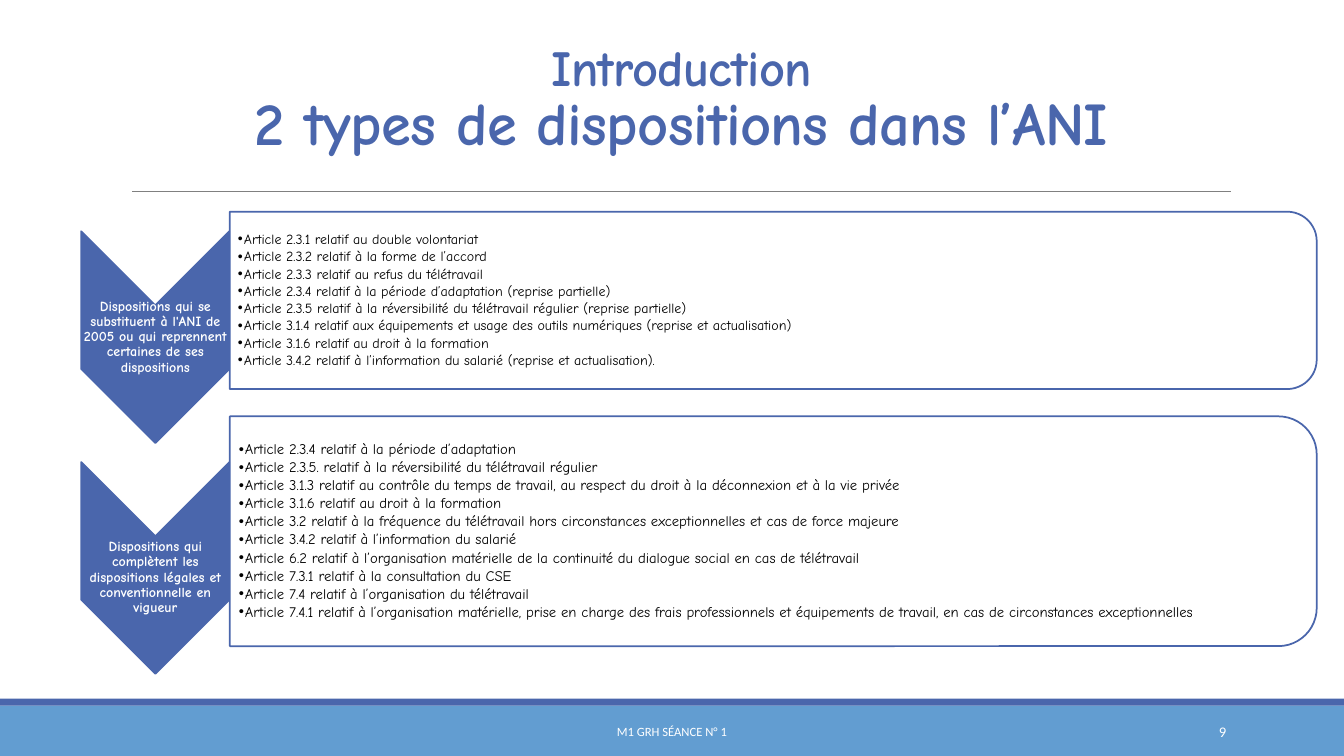
from lxml.etree import SubElement
from pptx import Presentation
from pptx.dml.color import RGBColor
from pptx.enum.shapes import MSO_CONNECTOR, MSO_SHAPE
from pptx.enum.text import MSO_ANCHOR, MSO_AUTO_SIZE, PP_ALIGN
from pptx.oxml.ns import qn
from pptx.util import Inches, Pt

WIDTH, HEIGHT = Inches(13.33), Inches(7.5)
BLUE, SKY, GREY, WHITE, BLACK = "4A66AC", "629DD1", "808080", "FFFFFF", "000000"
COMIC = "Comic Neue"
CORNER_INSET = 0.0488

SECTIONS = [
    {
        "label": "Dispositions qui se substituent à l'ANI de 2005 ou qui reprennent certaines de ses dispositions",
        "chevron_top": 30.6, "box_top": 28, "box_height": 23.47, "size": 10,
        "label_inset": 0.01, "list_inset": 0.08,
        "articles": [
            "Article 2.3.1 relatif au double volontariat",
            "Article 2.3.2 relatif à la forme de l’accord",
            "Article 2.3.3 relatif au refus du télétravail",
            "Article 2.3.4 relatif à la période d’adaptation (reprise partielle)",
            "Article 2.3.5 relatif à la réversibilité du télétravail régulier (reprise partielle)",
            "Article 3.1.4 relatif aux équipements et usage des outils numériques (reprise et actualisation)",
            "Article 3.1.6 relatif au droit à la formation",
            "Article 3.4.2 relatif à l’information du salarié (reprise et actualisation).",
        ],
    },
    {
        "label": "Dispositions qui complètent les dispositions légales et conventionnelle en vigueur",
        "chevron_top": 61.13, "box_top": 55.07, "box_height": 30.4, "size": 10.5,
        "label_inset": 0.2, "list_inset": 0.09,
        "articles": [
            "Article 2.3.4 relatif à la période d’adaptation",
            "Article 2.3.5. relatif à la réversibilité du télétravail régulier",
            "Article 3.1.3 relatif au contrôle du temps de travail, au respect du droit à la déconnexion et à la vie privée",
            "Article 3.1.6 relatif au droit à la formation",
            "Article 3.2 relatif à la fréquence du télétravail hors circonstances exceptionnelles et cas de force majeure",
            "Article 3.4.2 relatif à l’information du salarié",
            "Article 6.2 relatif à l’organisation matérielle de la continuité du dialogue social en cas de télétravail",
            "Article 7.3.1 relatif à la consultation du CSE",
            "Article 7.4 relatif à l’organisation du télétravail",
            "Article 7.4.1 relatif à l’organisation matérielle, prise en charge des frais professionnels et "
            "équipements de travail, en cas de circonstances exceptionnelles",
        ],
    },
]


def color(hex_value):
    """Turn a hex string into a colour."""
    return RGBColor.from_string(hex_value)


def share(x, y, w, h):
    """Turn percentages of the slide's size into lengths."""
    return [int(v * side / 100) for v, side in zip((x, y, w, h), (WIDTH, HEIGHT) * 2)]


def apply(target, **values):
    """Set every given attribute on the target."""
    for name, value in values.items():
        setattr(target, name, value)


def place(sp, frame):
    """Move and size a shape."""
    apply(sp, **dict(zip(("left", "top", "width", "height"), frame)))


def add_run(p, text, size, hex_value, font=COMIC, bold=False):
    """Add formatted text to a paragraph."""
    r = p.add_run()
    r.text = text
    apply(r.font, size=Pt(size), name=font, bold=bold)
    r.font.color.rgb = color(hex_value)
    return r


def set_frame(sp, anchor=MSO_ANCHOR.MIDDLE, **insets):
    """Set wrapping, anchor and insets of a text frame."""
    tf = sp.text_frame
    apply(tf, word_wrap=True, auto_size=MSO_AUTO_SIZE.NONE, vertical_anchor=anchor)
    apply(tf, **{f"margin_{side}": Inches(v) for side, v in insets.items()})
    return tf


def add_block(s, kind, frame, fill, line=None, turned=False):
    """Add a preset shape, turned by a quarter within its visible frame if asked."""
    x, y, w, h = frame
    if turned:
        x, y, w, h = x + (w - h) // 2, y + (h - w) // 2, h, w
    sp = s.shapes.add_shape(kind, x, y, w, h)
    apply(sp, rotation=90 if turned else 0)
    sp.shadow.inherit = False
    sp.fill.solid()
    sp.fill.fore_color.rgb = color(fill)
    if line:
        sp.line.color.rgb = color(line)
        sp.line.width = Pt(1.25)
    else:
        sp.line.fill.background()
    return sp


def add_rule(s, x1, x2, y):
    """Add the thin line under the title."""
    left, top, right, _ = share(x1, y, x2, 0)
    line = s.shapes.add_connector(MSO_CONNECTOR.STRAIGHT, left, top, right, top)
    line.line.color.rgb = color(GREY)
    line.line.width = Pt(0.5)
    SubElement(line.element.spPr, qn("a:effectLst"))


def add_text(s, frame, text, size, align, font="Calibri", bold=False, spacing=None, **insets):
    """Add a white one-paragraph text box."""
    tf = set_frame(s.shapes.add_textbox(*frame), **insets)
    p = tf.paragraphs[0]
    apply(p, alignment=align, line_spacing=spacing)
    add_run(p, text, size, WHITE, font, bold)


def fill_title(sp):
    """Write the two-line title."""
    place(sp, share(9.45, 4.13, 82.52, 17.47))
    p = set_frame(sp, MSO_ANCHOR.BOTTOM).paragraphs[0]
    apply(p, alignment=PP_ALIGN.CENTER, line_spacing=0.85)
    first = add_run(p, "Introduction", 36, BLUE, bold=True)
    p.add_line_break()
    second = add_run(p, "2 types de dispositions dans l’ANI", 43.2, BLUE, bold=True)
    for r in (first, second):
        r.font.element.set("spc", "-50") if hasattr(r.font, "element") else r._r.get_or_add_rPr().set("spc", "-50")


def fill_list(sp, frame, articles, size, inset):
    """Write the bulleted articles in a body placeholder and bring it to the front."""
    place(sp, frame)
    tf = set_frame(sp, left=inset, right=0.01, top=0.01, bottom=0.01)
    for i, article in enumerate(articles):
        p = tf.add_paragraph() if i else tf.paragraphs[0]
        apply(p, level=1, alignment=PP_ALIGN.LEFT, line_spacing=0.9,
              space_before=Pt(0), space_after=Pt(0.15 * size))
        add_run(p, article, size, BLACK)
        pPr = p._p.get_or_add_pPr()
        pPr.set("marL", str(Inches(0.06)))
        pPr.set("indent", str(-Inches(0.06)))
        SubElement(pPr, qn("a:buChar"), char="•")
    sp.element.getparent().append(sp.element)


def add_section(s, body, section):
    """Add a chevron with its label and the box with its list."""
    chevron = share(6.04, section["chevron_top"], 11.03, 28)
    add_block(s, MSO_SHAPE.CHEVRON, chevron, BLUE, BLUE, turned=True)
    x, y, w, h = chevron
    add_text(s, (x, y + w // 2, w, h - w), section["label"], 10, PP_ALIGN.CENTER, COMIC, True, 0.9,
             left=0.01, right=0.01, top=section["label_inset"], bottom=0.01)

    box = share(17.1, section["box_top"], 80.87, section["box_height"])
    panel = add_block(s, MSO_SHAPE.ROUND_2_SAME_RECTANGLE, box, WHITE, BLUE, turned=True)
    SubElement(panel.element.spPr.find(".//" + qn("a:srgbClr")), qn("a:alpha"), val="90000")
    x, y, w, h = box
    inset = int(CORNER_INSET * h)
    fill_list(body, (x, y + inset, w - inset, h - 2 * inset),
              section["articles"], section["size"], section["list_inset"])


def main():
    """Build and save the slide."""
    prs = Presentation()
    apply(prs, slide_width=WIDTH, slide_height=HEIGHT)
    s = prs.slides.add_slide(prs.slide_layouts[3])
    title, *bodies = s.placeholders
    add_block(s, MSO_SHAPE.RECTANGLE, share(0, 93.33, 100, 6.67), SKY)
    add_block(s, MSO_SHAPE.RECTANGLE, share(0, 92.4, 100, 0.93), BLUE)
    add_rule(s, 9.83, 91.6, 25.33)
    fill_title(title)
    add_text(s, share(30.23, 94.13, 39.53, 5.33), "M1 GRH SÉANCE N° 1", 9, PP_ALIGN.CENTER)
    add_text(s, share(81.25, 94.13, 10.73, 5.33), "9", 10.5, PP_ALIGN.RIGHT)
    for body, section in zip(bodies, SECTIONS):
        add_section(s, body, section)
    prs.save("out.pptx")


if __name__ == "__main__":
    main()
